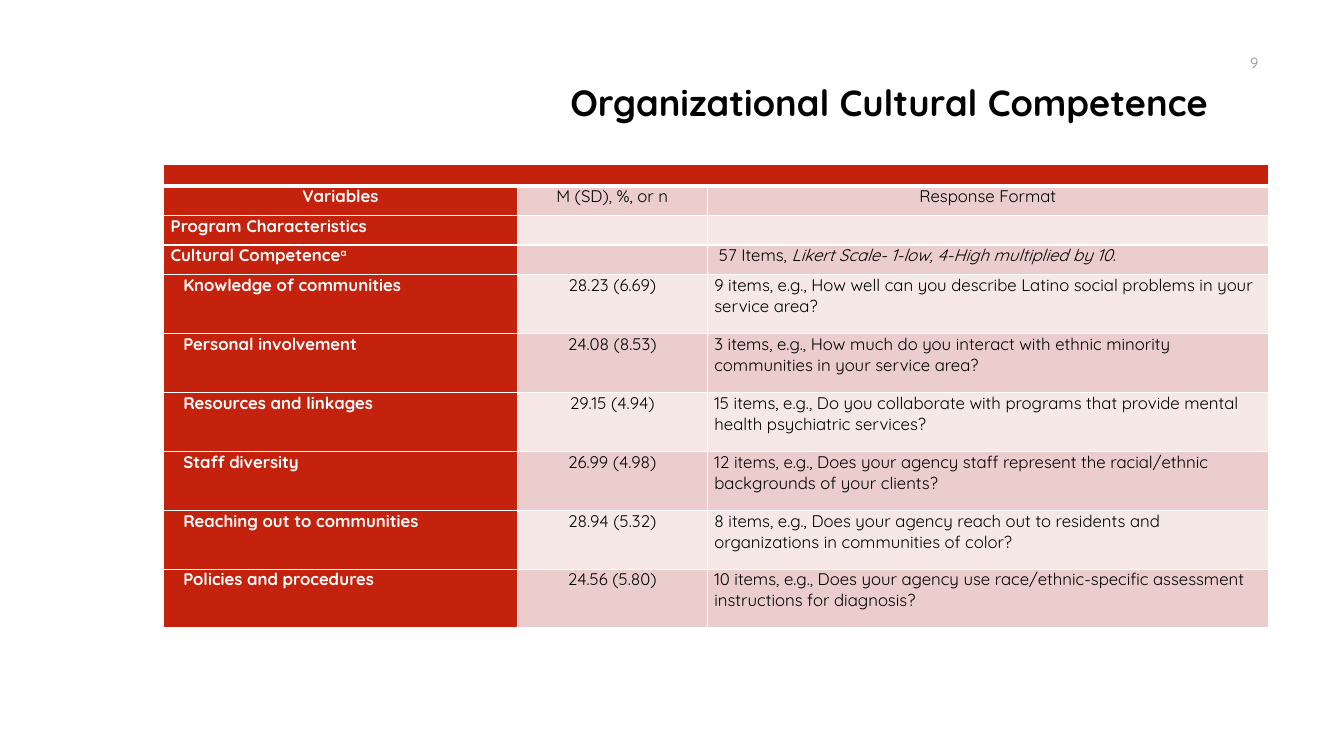
"""Build the slide on organizational cultural competence."""
from dataclasses import dataclass
from typing import Any

from lxml.etree import SubElement as Sub
from pptx import Presentation as Deck
from pptx.dml.color import RGBColor as Rgb
from pptx.enum.text import MSO_ANCHOR as Anchor, PP_ALIGN as Align
from pptx.oxml.ns import qn
from pptx.util import Pt


@dataclass(frozen=True)
class Theme:
    """Colours, type sizes and font of the slide."""
    face: str = "Quicksand"
    red: str = "C4220D"
    dark: str = "EACDCC"
    light: str = "F5E8E7"
    white: str = "FFFFFF"
    black: str = "000000"
    gray: str = "8C8C8C"
    head: float = 26
    body: float = 12
    note: float = 10.5


@dataclass(frozen=True)
class Bit:
    """A run of text and its style."""
    text: str
    slant: bool = False
    raised: bool = False


@dataclass(frozen=True)
class Entry:
    """One row of the table."""
    label: tuple[Bit, ...]
    score: str = ""
    form: tuple[Bit, ...] = ()
    high: float = 21.1
    indent: float = 0
    mid: bool = False


@dataclass(frozen=True)
class Label:
    """A text box with one line of text."""
    text: str
    box: tuple[float, float, float, float]
    size: float
    color: str
    bold: bool = False
    align: Align = Align.LEFT
    anchor: Anchor = Anchor.TOP


def scale(label: str, score: str, form: str) -> Entry:
    """Return the row of one competence scale."""
    return Entry((Bit(label),), score, (Bit(form),), 42.1, 9)


THEME = Theme()
WIDTHS = (252.6, 135.8, 400.8)
BAND = 15.2
LEFT, TOP = 116.9, 117.6
LABELS = (
    Label("9", (689.8, 30.2, 216, 28.8), THEME.note, THEME.gray,
          align=Align.RIGHT, anchor=Anchor.MIDDLE),
    Label("Organizational Cultural Competence", (400.3, 54, 492.5, 60.5),
          THEME.head, THEME.black, bold=True),
)
ROWS = (
    Entry((Bit("Variables"),), "M (SD), %, or n", (Bit("Response Format"),), mid=True),
    Entry((Bit("Program Characteristics"),)),
    Entry((Bit("Cultural Competence"), Bit("a", raised=True)), form=(
        Bit(" 57 Items, "),
        Bit("Likert Scale- 1-low, 4-High multiplied by 10.", slant=True))),
    scale("Knowledge of communities", "28.23 (6.69)",
          "9 items, e.g., How well can you describe Latino social problems in your service area?"),
    scale("Personal involvement", "24.08 (8.53)",
          "3 items, e.g., How much do you interact with ethnic minority communities in your service area?"),
    scale("Resources and linkages", "29.15 (4.94)",
          "15 items, e.g., Do you collaborate with programs that provide mental health psychiatric services?"),
    scale("Staff diversity", "26.99 (4.98)",
          "12 items, e.g., Does your agency staff represent the racial/ethnic backgrounds of your clients?"),
    scale("Reaching out to communities", "28.94 (5.32)",
          "8 items, e.g., Does your agency reach out to residents and organizations in communities of color?"),
    scale("Policies and procedures", "24.56 (5.80)",
          "10 items, e.g., Does your agency use race/ethnic-specific assessment instructions for diagnosis?"),
)


def write(para: Any, bit: Bit, size: float, color: str, bold: bool) -> None:
    """Add one styled run to a paragraph."""
    run = para.add_run()
    run.text = bit.text
    font = run.font
    font.name, font.size = THEME.face, Pt(size)
    font.bold, font.italic = bold, bit.slant
    font.color.rgb = Rgb.from_string(color)
    if bit.raised:
        run._r.get_or_add_rPr().set("baseline", "30000")


def add_label(slide: Any, label: Label) -> None:
    """Draw a text box."""
    frame = slide.shapes.add_textbox(*map(Pt, label.box)).text_frame
    frame.word_wrap = True
    frame.vertical_anchor = label.anchor
    para = frame.paragraphs[0]
    para.alignment = label.align
    write(para, Bit(label.text), label.size, label.color, label.bold)


def dress(cell: Any, fill: str, base: float = 1) -> None:
    """Set the insets, borders and fill of a cell."""
    cell.margin_left = cell.margin_right = Pt(5)
    cell.margin_top = cell.margin_bottom = Pt(0)
    for side, width in (("L", 1), ("R", 1), ("T", 1), ("B", base)):
        line = Sub(cell._tc.get_or_add_tcPr(), qn(f"a:ln{side}"), w=str(Pt(width)))
        Sub(Sub(line, qn("a:solidFill")), qn("a:srgbClr"), val=THEME.white)
    cell.fill.solid()
    cell.fill.fore_color.rgb = Rgb.from_string(fill)


def fill_cell(cell: Any, bits: tuple[Bit, ...], color: str = THEME.black,
              bold: bool = False, mid: bool = False, indent: float = 0) -> None:
    """Write the runs of a cell, or keep an empty one small."""
    para = cell.text_frame.paragraphs[0]
    para.alignment = Align.CENTER if mid else Align.LEFT
    if indent:
        para._p.get_or_add_pPr().set("marL", str(Pt(indent)))
    for bit in bits:
        write(para, bit, THEME.body, color, bold)
    if not bits:
        Sub(para._p, qn("a:endParaRPr"), sz=str(int(THEME.body * 100)))


def add_grid(slide: Any) -> None:
    """Draw the table of scales."""
    highs = (BAND, *(row.high for row in ROWS))
    table = slide.shapes.add_table(len(highs), len(WIDTHS), Pt(LEFT), Pt(TOP),
                                   Pt(sum(WIDTHS)), Pt(sum(highs))).table
    table.first_row = table.horz_banding = False
    for col, width in zip(table.columns, WIDTHS):
        col.width = Pt(width)
    for line, high in zip(table.rows, highs):
        line.height = Pt(high)
    for cell in table.rows[0].cells:
        dress(cell, THEME.red, 3)
        fill_cell(cell, ())
    table.cell(0, 0).merge(table.cell(0, len(WIDTHS) - 1))
    for num, row in enumerate(ROWS, 1):
        label, score, form = table.rows[num].cells
        shade = THEME.dark if num % 2 else THEME.light
        for cell, fill in ((label, THEME.red), (score, shade), (form, shade)):
            dress(cell, fill, 1)
        fill_cell(label, row.label, THEME.white, True, row.mid, row.indent)
        fill_cell(score, (Bit(row.score),) if row.score else (), mid=True)
        fill_cell(form, row.form, mid=row.mid)


def main() -> None:
    """Build and save the deck."""
    deck = Deck()
    deck.slide_width, deck.slide_height = Pt(960), Pt(540)
    slide = deck.slides.add_slide(deck.slide_layouts[6])
    add_grid(slide)
    for label in LABELS:
        add_label(slide, label)
    deck.save("out.pptx")


if __name__ == "__main__":
    main()
